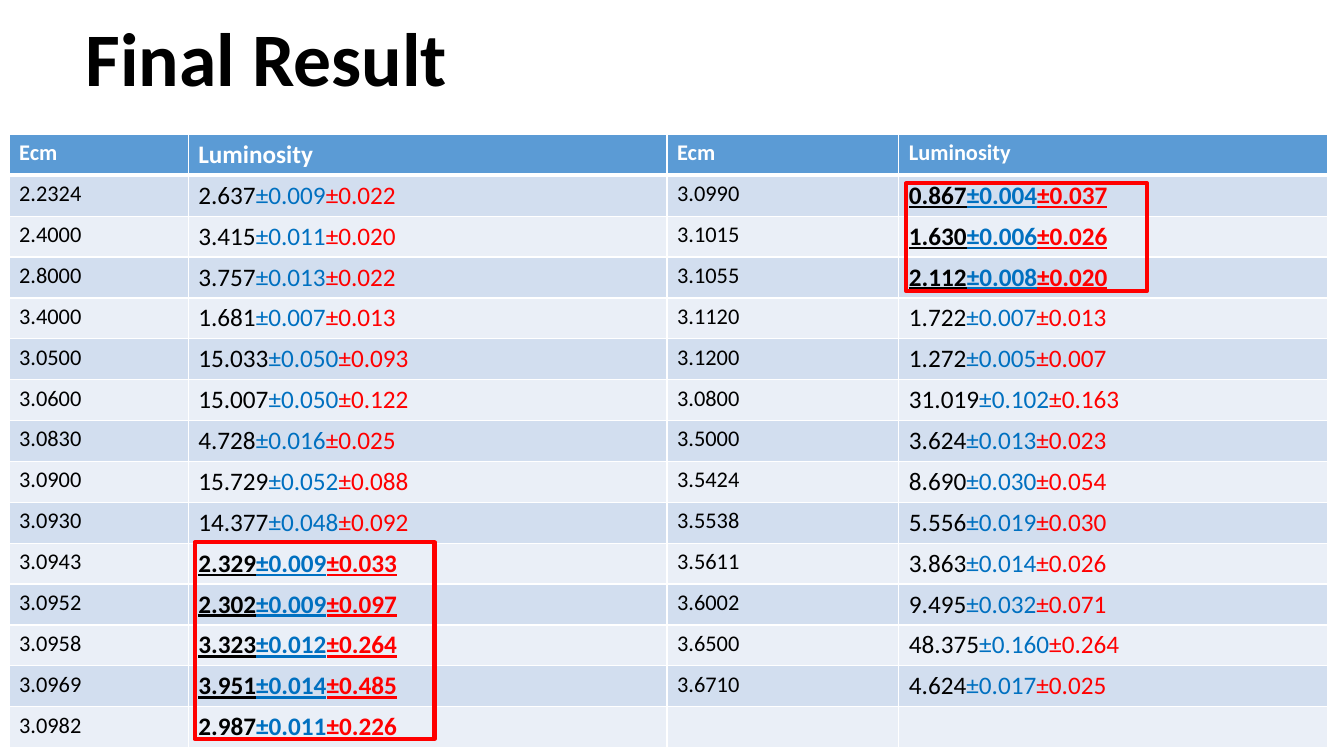
import pptx
import pptx.dml.color
import pptx.enum.shapes
import pptx.enum.text
import pptx.oxml.ns
import pptx.util
import lxml.etree

Pt = pptx.util.Pt

COLORS = {
    "text": "000000",
    "white": "FFFFFF",
    "header": "5B9BD5",
    "band_dark": "D2DEEF",
    "band_light": "EAEFF7",
    "first_error": "0070C0",
    "second_error": "FF0000",
    "highlight": "FF0000",
}

# Energy, luminosity, first error, second error
LEFT_RESULTS = [
    ("2.2324", "2.637", "0.009", "0.022"),
    ("2.4000", "3.415", "0.011", "0.020"),
    ("2.8000", "3.757", "0.013", "0.022"),
    ("3.4000", "1.681", "0.007", "0.013"),
    ("3.0500", "15.033", "0.050", "0.093"),
    ("3.0600", "15.007", "0.050", "0.122"),
    ("3.0830", "4.728", "0.016", "0.025"),
    ("3.0900", "15.729", "0.052", "0.088"),
    ("3.0930", "14.377", "0.048", "0.092"),
    ("3.0943", "2.329", "0.009", "0.033"),
    ("3.0952", "2.302", "0.009", "0.097"),
    ("3.0958", "3.323", "0.012", "0.264"),
    ("3.0969", "3.951", "0.014", "0.485"),
    ("3.0982", "2.987", "0.011", "0.226"),
]
RIGHT_RESULTS = [
    ("3.0990", "0.867", "0.004", "0.037"),
    ("3.1015", "1.630", "0.006", "0.026"),
    ("3.1055", "2.112", "0.008", "0.020"),
    ("3.1120", "1.722", "0.007", "0.013"),
    ("3.1200", "1.272", "0.005", "0.007"),
    ("3.0800", "31.019", "0.102", "0.163"),
    ("3.5000", "3.624", "0.013", "0.023"),
    ("3.5424", "8.690", "0.030", "0.054"),
    ("3.5538", "5.556", "0.019", "0.030"),
    ("3.5611", "3.863", "0.014", "0.026"),
    ("3.6002", "9.495", "0.032", "0.071"),
    ("3.6500", "48.375", "0.160", "0.264"),
    ("3.6710", "4.624", "0.017", "0.025"),
]
HIGHLIGHTED = {"3.0943", "3.0952", "3.0958", "3.0969", "3.0982",
               "3.0990", "3.1015", "3.1055"}
HEADINGS = [("Ecm", 16), ("Luminosity", 18), ("Ecm", 16), ("Luminosity", 16)]
COLUMN_WIDTHS = [128, 342, 165.6, 306]
ROW_HEIGHT = 29.2


def rgb(color):
    return pptx.dml.color.RGBColor.from_string(COLORS[color])


class ResultSlide:
    font = "Calibri"

    def __init__(self, deck):
        self.slide = deck.slides.add_slide(deck.slide_layouts[5])

    def run(self, paragraph, text, size, color="text", bold=False, underline=False):
        run = paragraph.add_run()
        run.text = text
        run.font.name = self.font
        run.font.size = Pt(size)
        run.font.color.rgb = rgb(color)
        run.font.bold = bold
        run.font.underline = underline

    def title(self, text, left, top, width, height):
        title = self.slide.shapes.title
        title.left, title.top = Pt(left), Pt(top)
        title.width, title.height = Pt(width), Pt(height)
        title.text_frame.vertical_anchor = pptx.enum.text.MSO_ANCHOR.MIDDLE
        paragraph = title.text_frame.paragraphs[0]
        paragraph.alignment = pptx.enum.text.PP_ALIGN.LEFT
        paragraph.line_spacing = 0.9
        self.run(paragraph, text, 54, bold=True)

    def table(self, left, top, widths, row_count):
        table = self.slide.shapes.add_table(
            row_count, len(widths), Pt(left), Pt(top),
            Pt(sum(widths)), Pt(row_count * ROW_HEIGHT)).table
        for column, width in zip(table.columns, widths):
            column.width = Pt(width)
        for index, row in enumerate(table.rows):
            row.height = Pt(ROW_HEIGHT)
            band = "header" if index == 0 else ("band_light", "band_dark")[index % 2]
            for cell in row.cells:
                self.borders(cell, top=3 if index == 1 else 1,
                             bottom=3 if index == 0 else 1)
                cell.fill.solid()
                cell.fill.fore_color.rgb = rgb(band)
        return table

    def borders(self, cell, top, bottom):
        qn = pptx.oxml.ns.qn
        properties = cell._tc.get_or_add_tcPr()
        for side, width in (("L", 1), ("R", 1), ("T", top), ("B", bottom)):
            line = lxml.etree.SubElement(properties, qn(f"a:ln{side}"), w=str(Pt(width)))
            fill = lxml.etree.SubElement(line, qn("a:solidFill"))
            lxml.etree.SubElement(fill, qn("a:srgbClr"), val=COLORS["white"])

    def result(self, energy_cell, luminosity_cell, result):
        energy, value, first_error, second_error = result
        self.run(energy_cell.text_frame.paragraphs[0], energy, 16)
        marked = energy in HIGHLIGHTED
        paragraph = luminosity_cell.text_frame.paragraphs[0]
        for text, color in ((value, "text"), ("±" + first_error, "first_error"),
                            ("±" + second_error, "second_error")):
            self.run(paragraph, text, 18, color, bold=marked, underline=marked)

    def frame(self, left, top, width, height):
        frame = self.slide.shapes.add_shape(
            pptx.enum.shapes.MSO_SHAPE.RECTANGLE,
            Pt(left), Pt(top), Pt(width), Pt(height))
        frame.shadow.inherit = False
        frame.fill.background()
        frame.line.color.rgb = rgb("highlight")
        frame.line.width = Pt(3)


def main():
    deck = pptx.Presentation()
    deck.slide_width, deck.slide_height = Pt(960), Pt(540)
    page = ResultSlide(deck)
    page.title("Final Result", 54, 5, 792, 79)

    luminosities = page.table(6.5, 96, COLUMN_WIDTHS, len(LEFT_RESULTS) + 1)
    for column, (heading, size) in enumerate(HEADINGS):
        paragraph = luminosities.cell(0, column).text_frame.paragraphs[0]
        page.run(paragraph, heading, size, "white", bold=True)
    for column, results in ((0, LEFT_RESULTS), (2, RIGHT_RESULTS)):
        for row, result in enumerate(results, start=1):
            page.result(luminosities.cell(row, column),
                        luminosities.cell(row, column + 1), result)

    page.frame(139, 387.4, 171.4, 140.4)
    page.frame(647.3, 131, 172, 77)
    deck.save("out.pptx")


if __name__ == "__main__":
    main()
